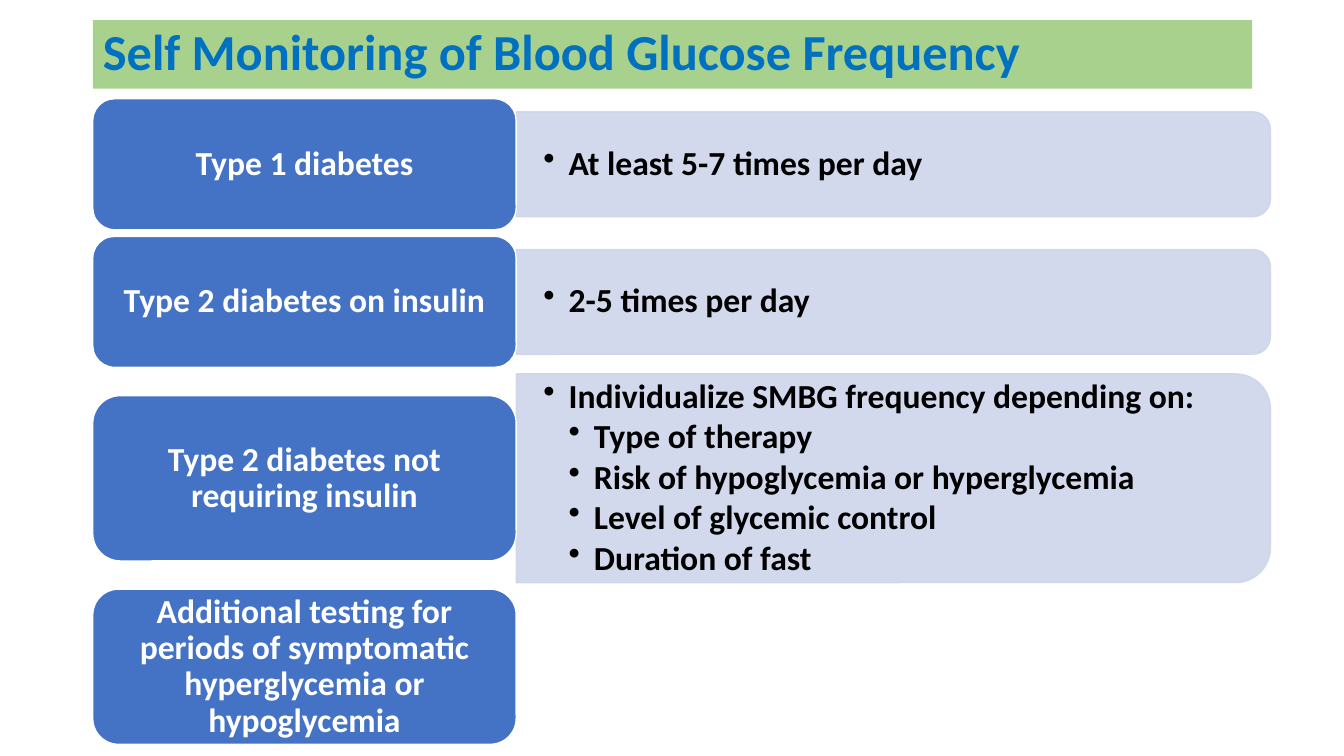
from dataclasses import dataclass

from lxml import etree
from pptx import Presentation
from pptx.dml.color import RGBColor
from pptx.enum.shapes import MSO_SHAPE
from pptx.enum.text import MSO_ANCHOR, MSO_AUTO_SIZE, PP_ALIGN
from pptx.oxml.ns import qn
from pptx.util import Inches, Pt

ROUNDED = MSO_SHAPE.ROUNDED_RECTANGLE
ROUNDED_TOP = MSO_SHAPE.ROUND_2_SAME_RECTANGLE
MIDDLE = MSO_ANCHOR.MIDDLE
LEFT, CENTER = PP_ALIGN.LEFT, PP_ALIGN.CENTER

GREEN = RGBColor(0xA9, 0xD1, 0x8E)
TITLE_BLUE = RGBColor(0x00, 0x70, 0xC0)
LABEL_BLUE = RGBColor(0x44, 0x72, 0xC4)
PALE_BLUE = RGBColor(0xCF, 0xD5, 0xEA)
WHITE = RGBColor(0xFF, 0xFF, 0xFF)
BLACK = RGBColor(0x00, 0x00, 0x00)

FONT = "Calibri"
CELL = Inches(0.1)  # one column or row of the layout grid
LABEL_COLUMN, LABEL_COLUMNS = 9.2, 42
DETAIL_COLUMN, DETAIL_COLUMNS = 51.2, 74.8
FIRST_ROW, GAP_ROWS = 9.8, 0.65
INDENT = Inches(0.25)


@dataclass(frozen=True)
class Band:
    label: str
    label_rows: float
    detail_rows: float = 0
    details: tuple[tuple[int, str], ...] = ()  # (outline level, wording)

    @property
    def rows(self) -> float:
        return max(self.label_rows, self.detail_rows)


BANDS = (
    Band("Type 1 diabetes", 13, 10.4, ((0, "At least 5-7 times per day"),)),
    Band("Type 2 diabetes on insulin", 13, 10.4, ((0, "2-5 times per day"),)),
    Band("Type 2 diabetes not requiring insulin", 16.4, 20.7, (
        (0, "Individualize SMBG frequency depending on:"),
        (1, "Type of therapy"),
        (1, "Risk of hypoglycemia or hyperglycemia"),
        (1, "Level of glycemic control"),
        (1, "Duration of fast"),
    )),
    Band("Additional testing for periods of symptomatic hyperglycemia or hypoglycemia",
         15.4),
)


def grid(cells: float) -> int:
    return round(cells * CELL)


def format_paragraph(para, size: int, color: RGBColor, align) -> None:
    para.alignment = align
    para.line_spacing = 0.9
    for span in para.runs:
        span.font.name = FONT
        span.font.size = Pt(size)
        span.font.bold = True
        span.font.color.rgb = color


def add_bullet(para, level: int) -> None:
    para.level = level
    properties = para._p.get_or_add_pPr()
    properties.set("marL", str(INDENT * (level + 1)))
    properties.set("indent", str(-INDENT))
    etree.SubElement(properties, qn("a:buChar")).set("char", "•")


def paint(shape, fill: RGBColor, line: RGBColor) -> None:
    shape.shadow.inherit = False
    shape.fill.solid()
    shape.fill.fore_color.rgb = fill
    shape.line.color.rgb = line
    shape.line.width = Pt(1)


def add_title(page, wording: str) -> None:
    title = page.shapes.title
    title.left, title.top = grid(LABEL_COLUMN), grid(2)
    title.width, title.height = grid(115), grid(6.8)
    title.fill.solid()
    title.fill.fore_color.rgb = GREEN
    frame = title.text_frame
    frame.text = wording
    frame.auto_size = MSO_AUTO_SIZE.NONE
    frame.vertical_anchor = MIDDLE
    format_paragraph(frame.paragraphs[0], 36, TITLE_BLUE, LEFT)


def add_detail(page, band: Band, center: float) -> None:
    """Draw a panel turned by a quarter, with upright text over it."""
    middle = DETAIL_COLUMN + DETAIL_COLUMNS / 2
    panel = page.shapes.add_shape(
        ROUNDED_TOP, grid(middle - band.detail_rows / 2),
        grid(center - DETAIL_COLUMNS / 2),
        grid(band.detail_rows), grid(DETAIL_COLUMNS))
    panel.rotation = 90
    paint(panel, PALE_BLUE, PALE_BLUE)
    for color in panel._element.spPr.iter(qn("a:srgbClr")):
        etree.SubElement(color, qn("a:alpha")).set("val", "90000")

    box = page.shapes.add_textbox(
        grid(DETAIL_COLUMN), grid(center - band.detail_rows / 2),
        grid(DETAIL_COLUMNS), grid(band.detail_rows))
    frame = box.text_frame
    frame.word_wrap = True
    frame.vertical_anchor = MIDDLE
    frame.margin_left = frame.margin_right = Inches(0.27)
    frame.margin_top = frame.margin_bottom = Inches(0.14)
    frame.text = "\n".join(wording for _, wording in band.details)
    for para, (level, _) in zip(frame.paragraphs, band.details):
        format_paragraph(para, 24, BLACK, LEFT)
        para.space_after = Pt(3)
        add_bullet(para, level)


def add_label(page, band: Band, center: float) -> None:
    label = page.shapes.add_shape(
        ROUNDED, grid(LABEL_COLUMN), grid(center - band.label_rows / 2),
        grid(LABEL_COLUMNS), grid(band.label_rows))
    paint(label, LABEL_BLUE, WHITE)
    frame = label.text_frame
    frame.word_wrap = True
    frame.vertical_anchor = MIDDLE
    frame.text = band.label
    format_paragraph(frame.paragraphs[0], 24, WHITE, CENTER)


def main() -> None:
    deck = Presentation()
    deck.slide_width, deck.slide_height = Inches(13.33), Inches(7.5)
    page = deck.slides.add_slide(deck.slide_layouts.get_by_name("Title Only"))
    add_title(page, "Self Monitoring of Blood Glucose Frequency")
    top = FIRST_ROW
    for band in BANDS:
        center = top + band.rows / 2
        if band.details:
            add_detail(page, band, center)
        add_label(page, band, center)
        top += band.rows + GAP_ROWS
    deck.save("out.pptx")


if __name__ == "__main__":
    main()
